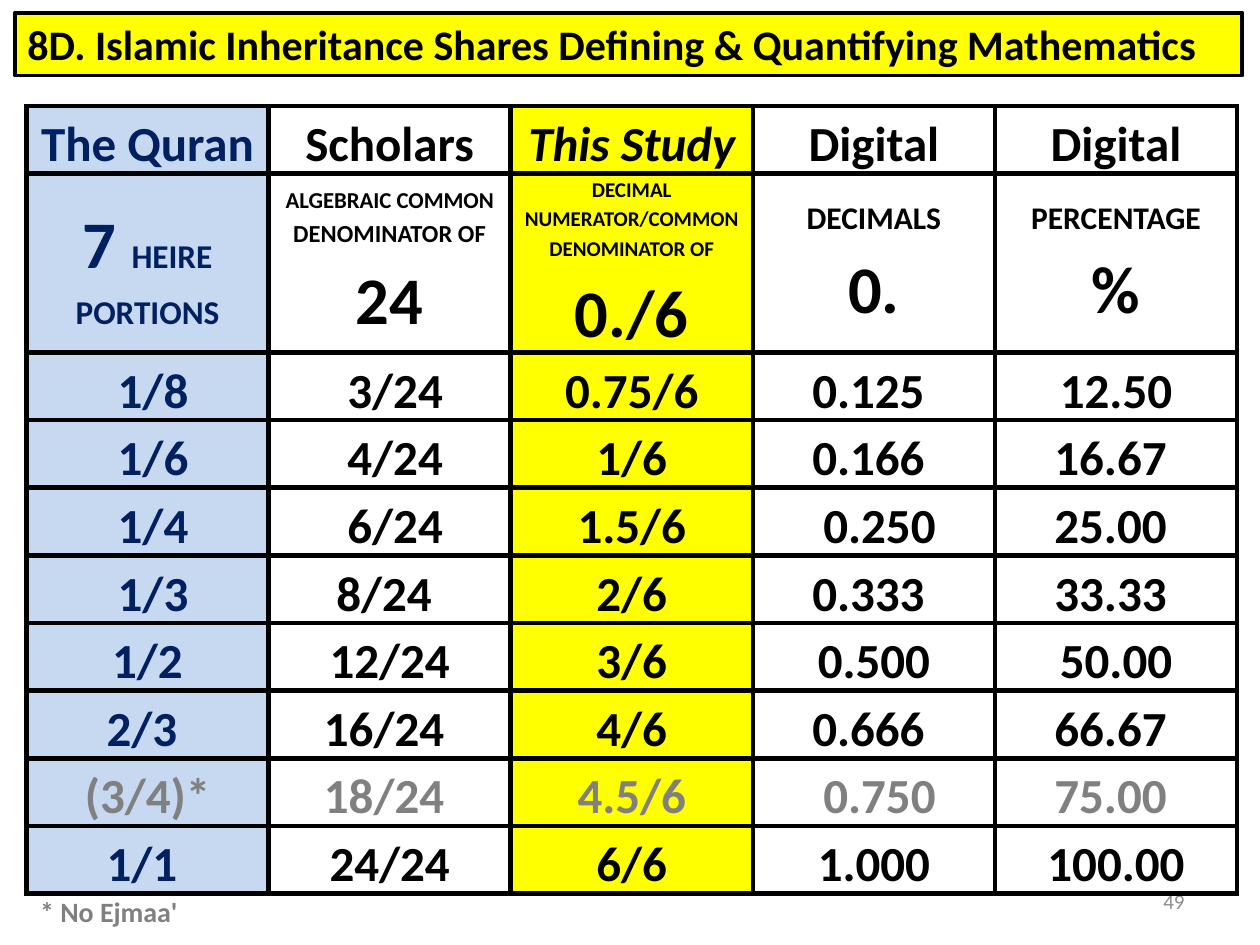
from lxml import etree
from pptx import Presentation
from pptx.dml.color import RGBColor
from pptx.enum.shapes import MSO_SHAPE
from pptx.enum.text import MSO_ANCHOR, PP_ALIGN
from pptx.oxml.ns import qn
from pptx.util import Inches, Pt

RECTANGLE = MSO_SHAPE.RECTANGLE
TOP, MIDDLE = MSO_ANCHOR.TOP, MSO_ANCHOR.MIDDLE
LEFT, CENTER, RIGHT = PP_ALIGN.LEFT, PP_ALIGN.CENTER, PP_ALIGN.RIGHT

BLACK = RGBColor(0x00, 0x00, 0x00)
NAVY = RGBColor(0x00, 0x20, 0x60)
GRAY = RGBColor(0x80, 0x80, 0x80)
PAGE_GRAY = RGBColor(0x8C, 0x8C, 0x8C)
PALE_BLUE = RGBColor(0xC6, 0xD9, 0xF1)
YELLOW = RGBColor(0xFF, 0xFF, 0x00)

COLUMN_FILLS = [PALE_BLUE, None, YELLOW, None, None]
HEADINGS = ["The Quran", "Scholars", "This Study", "Digital", "Digital"]
# Each cell is a list of paragraphs; each paragraph is a list of (text, size) runs.
MEASURES = [
    [[("7 ", 38), ("HEIRE", 19)], [("PORTIONS", 19)]],
    [[("ALGEBRAIC COMMON", 13)], [("DENOMINATOR OF", 14)], [("24", 38)]],
    [[("DECIMAL NUMERATOR/COMMON", 12)], [("DENOMINATOR OF", 12)], [("0./6", 38)]],
    [[("DECIMALS", 18)], [("0.", 38)]],
    [[("PERCENTAGE", 18)], [("%", 38)]],
]
SHARES = [
    [" 1/8", " 3/24", "0.75/6", "0.125 ", "12.50"],
    [" 1/6", " 4/24", "1/6", "0.166 ", "16.67 "],
    [" 1/4", " 6/24", "1.5/6", " 0.250", "25.00 "],
    [" 1/3", "8/24 ", "2/6", "0.333 ", "33.33 "],
    ["1/2", "12/24", "3/6", "0.500", "50.00"],
    ["2/3 ", "16/24 ", "4/6", "0.666 ", "66.67 "],
    ["(3/4)*", "18/24 ", "4.5/6", " 0.750", "75.00 "],
    ["1/1 ", "24/24", "6/6", "1.000", "100.00"],
]
DISPUTED_ROW = 8

TABLE_WIDTH, TABLE_HEIGHT = 9.61, 6.25
MEASURE_HEIGHT = 1.42


def write(frame, paragraphs, color, align=LEFT, spacing=None, **font_values):
    for index, runs in enumerate(paragraphs):
        paragraph = frame.add_paragraph() if index else frame.paragraphs[0]
        paragraph.alignment = align
        paragraph.line_spacing = spacing
        for text, size in runs:
            run = paragraph.add_run()
            run.text = text
            run.font.color.rgb = color
            values = {"name": "Calibri", "size": Pt(size), **font_values}
            for name, value in values.items():
                setattr(run.font, name, value)


def add_borders(cell):
    properties = cell._tc.get_or_add_tcPr()
    for side in ("a:lnL", "a:lnR", "a:lnT", "a:lnB"):
        line = etree.SubElement(properties, qn(side), w=str(Pt(3)))
        fill = etree.SubElement(line, qn("a:solidFill"))
        etree.SubElement(fill, qn("a:srgbClr"), val=str(BLACK))


presentation = Presentation()
presentation.slide_width, presentation.slide_height = Inches(10), Inches(7.5)
slide = presentation.slides.add_slide(presentation.slide_layouts[6])

# Page number
page_number = slide.shapes.add_textbox(Inches(7.17), Inches(6.95), Inches(2.33), Inches(0.4))
page_number.text_frame.word_wrap = True
page_number.text_frame.vertical_anchor = MIDDLE
write(page_number.text_frame, [[("49", 12)]], PAGE_GRAY, RIGHT)

# Table of shares
rows = [[[[(text, 28)]] for text in HEADINGS], MEASURES]
rows += [[[[(text, 28)]] for text in share] for share in SHARES]
table = slide.shapes.add_table(
    len(rows), len(HEADINGS), Inches(0.21), Inches(0.84),
    Inches(TABLE_WIDTH), Inches(TABLE_HEIGHT)).table
table.first_row = table.horz_banding = False
for column in table.columns:
    column.width = Inches(TABLE_WIDTH / len(HEADINGS))
for row in table.rows:
    row.height = Inches((TABLE_HEIGHT - MEASURE_HEIGHT) / (len(rows) - 1))
table.rows[1].height = Inches(MEASURE_HEIGHT)

cell_format = {
    "margin_left": Inches(0.07), "margin_right": Inches(0.07),
    "margin_top": 0, "margin_bottom": 0, "vertical_anchor": MIDDLE,
}
for row_index, row in enumerate(rows):
    for column_index, paragraphs in enumerate(row):
        cell = table.cell(row_index, column_index)
        for name, value in cell_format.items():
            setattr(cell, name, value)
        add_borders(cell)
        fill_color = COLUMN_FILLS[column_index]
        if fill_color is None:
            cell.fill.background()
        else:
            cell.fill.solid()
            cell.fill.fore_color.rgb = fill_color
        color = NAVY if column_index == 0 else BLACK
        if row_index == DISPUTED_ROW:
            color = GRAY
        italic = row_index == 0 and column_index == 2
        write(cell.text_frame, paragraphs, color, CENTER, 1.15, bold=True, italic=italic)

# Footnote
footnote = slide.shapes.add_textbox(Inches(0.22), Inches(7.05), Inches(1.81), Inches(0.37))
footnote.text_frame.word_wrap = True
write(footnote.text_frame, [[("* No Ejmaa'", 16)]], GRAY, bold=True)

# Title bar
title = slide.shapes.add_shape(RECTANGLE, Inches(0.12), Inches(0.1), Inches(9.74), Inches(0.5))
title.shadow.inherit = False
title.fill.solid()
title.fill.fore_color.rgb = YELLOW
title.line.color.rgb = BLACK
title.line.width = Pt(2.25)
title.text_frame.word_wrap = True
title.text_frame.vertical_anchor = TOP
title_text = "8D. Islamic Inheritance Shares Defining & Quantifying Mathematics"
write(title.text_frame, [[(title_text, 24)]], BLACK, bold=True)

presentation.save("out.pptx")
